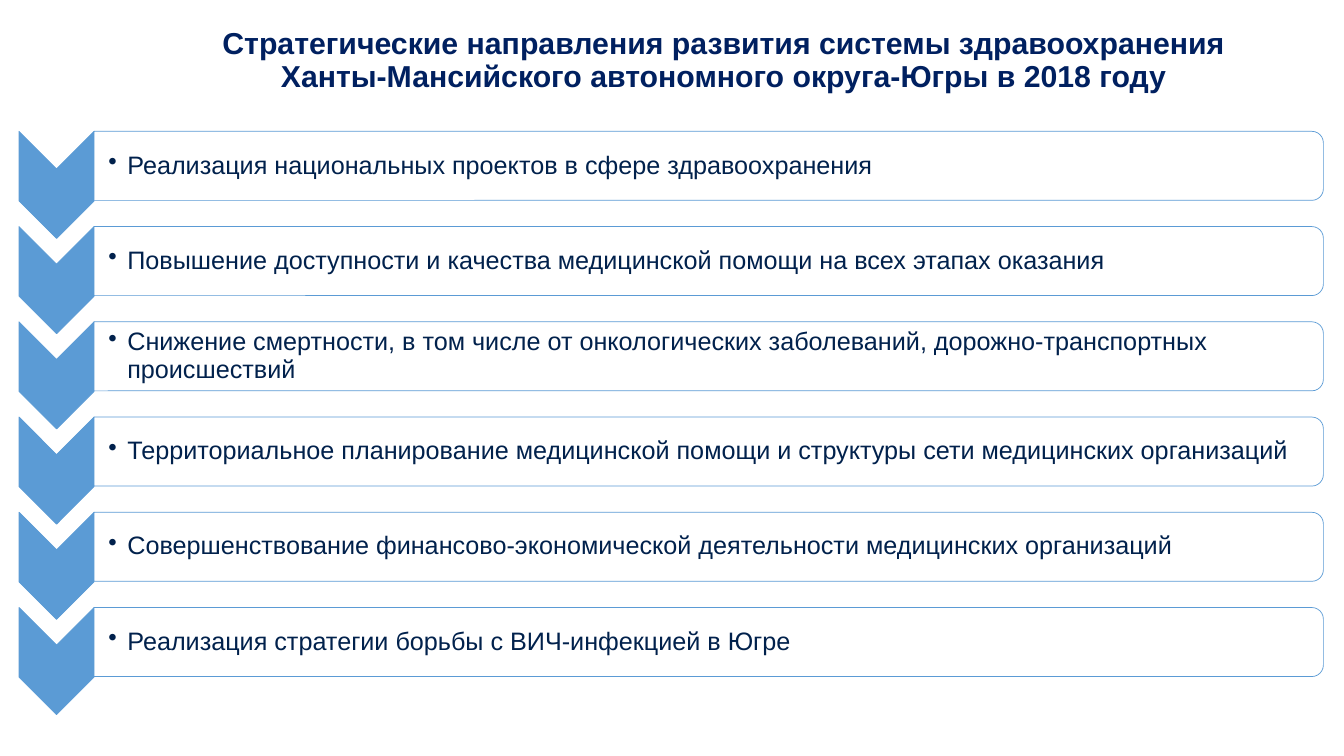
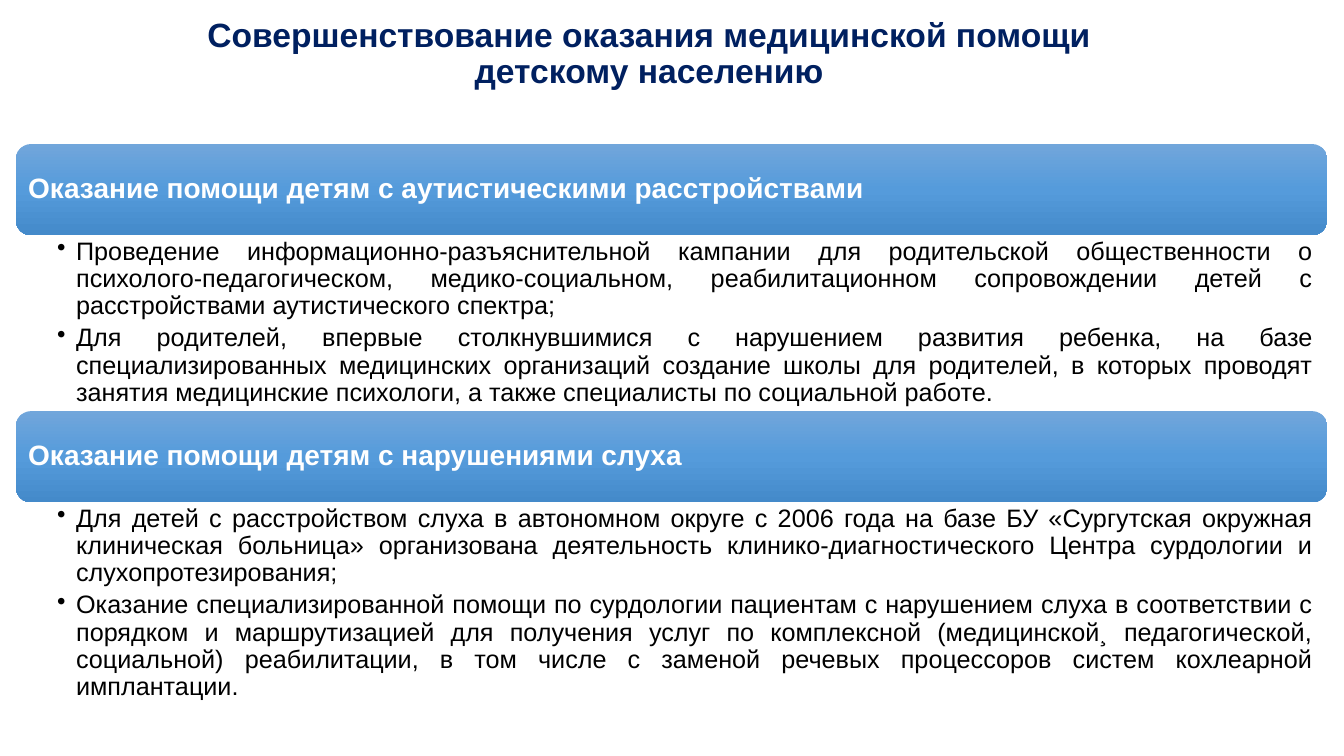
import dataclasses

import lxml.etree
import pptx
import pptx.dml.color
import pptx.enum.shapes
import pptx.enum.text
import pptx.oxml.ns
import pptx.util

Cm = pptx.util.Cm
Pt = pptx.util.Pt
RGBColor = pptx.dml.color.RGBColor
MSO_SHAPE = pptx.enum.shapes.MSO_SHAPE
MSO_ANCHOR = pptx.enum.text.MSO_ANCHOR
PP_ALIGN = pptx.enum.text.PP_ALIGN
qn = pptx.oxml.ns.qn


@dataclasses.dataclass(frozen=True)
class Theme:
    font: str = "Arial"
    title_color: RGBColor = RGBColor.from_string("002060")
    accent: RGBColor = RGBColor.from_string("5B9BD5")
    direction_color: RGBColor = RGBColor.from_string("01214C")
    white: RGBColor = RGBColor.from_string("FFFFFF")
    black: RGBColor = RGBColor.from_string("000000")
    band_stops: tuple = ((0, "71A6DB"), (50000, "559BDB"), (100000, "448ACA"))
    heading_size: float = 20
    body_size: float = 18
    line_spacing: float = 0.9
    paragraph_gap: float = 3.5


theme = Theme()


def write_text(shape, texts, size, color, bold=False, bulleted=False,
               align=PP_ALIGN.LEFT, anchor=MSO_ANCHOR.MIDDLE, margins=None):
    """Fill a shape with paragraphs; margins are left, top, right, bottom in cm."""
    frame = shape.text_frame
    frame.text = "\n".join(texts)
    frame.word_wrap = True
    frame.auto_size = pptx.enum.text.MSO_AUTO_SIZE.NONE
    frame.vertical_anchor = anchor
    if margins:
        (frame.margin_left, frame.margin_top,
         frame.margin_right, frame.margin_bottom) = map(Cm, margins)
    for number, paragraph in enumerate(frame.paragraphs):
        paragraph.alignment = align
        paragraph.line_spacing = theme.line_spacing
        if number:
            paragraph.space_before = Pt(theme.paragraph_gap)
        if bulleted:
            properties = paragraph._p.get_or_add_pPr()
            properties.set("marL", str(Cm(0.48)))
            properties.set("indent", str(-Cm(0.48)))
            lxml.etree.SubElement(properties, qn("a:buChar"), char="•")
        for run in paragraph.runs:
            run.font.name = theme.font
            run.font.size = Pt(size)
            run.font.bold = bold
            run.font.color.rgb = color


def add_turned_shape(slide, kind, left, top, width, height, fill_color):
    """Add a shape turned by 90 degrees that covers the given area in cm."""
    shape = slide.shapes.add_shape(
        kind, Cm(left + (width - height) / 2), Cm(top + (height - width) / 2),
        Cm(height), Cm(width))
    shape.rotation = 90
    shape.shadow.inherit = False
    shape.fill.solid()
    shape.fill.fore_color.rgb = fill_color
    shape.line.color.rgb = theme.accent
    shape.line.width = Pt(0.5)
    return shape


presentation = pptx.Presentation()
presentation.slide_width = Cm(33.87)
presentation.slide_height = Cm(19.05)
title_only_layout = presentation.slide_layouts[5]

# Titles: text, size, left, top, width, height
titles = [
    ("Стратегические направления развития системы здравоохранения "
     "Ханты-Мансийского автономного округа-Югры в 2018 году",
     21.6, 4.09, 0.5, 28.3, 2.1),
    ("Совершенствование оказания медицинской помощи детскому населению",
     24, 3.68, -0.13, 25.35, 3),
]
slides = []
for text, size, left, top, width, height in titles:
    slide = presentation.slides.add_slide(title_only_layout)
    title = slide.shapes.title
    title.left, title.top, title.width, title.height = map(Cm, (left, top, width, height))
    write_text(title, [text], size, theme.title_color, bold=True, align=PP_ALIGN.CENTER)
    slides.append(slide)
directions_slide, children_slide = slides

# Strategic directions
directions = [
    "Реализация национальных проектов в сфере здравоохранения",
    "Повышение доступности и качества медицинской помощи на всех этапах оказания",
    "Снижение смертности, в том числе от онкологических заболеваний, "
    "дорожно-транспортных происшествий",
    "Территориальное планирование медицинской помощи и структуры сети "
    "медицинских организаций",
    "Совершенствование финансово-экономической деятельности медицинских организаций",
    "Реализация стратегии борьбы с ВИЧ-инфекцией в Югре",
]
first_row_top, row_step = 3.31, 2.4
chevron_left, chevron_width, chevron_height = 0.48, 1.89, 2.7
frame_left, frame_width, frame_height = 2.37, 30.98, 1.74
for row, direction in enumerate(directions):
    top = first_row_top + row * row_step
    add_turned_shape(directions_slide, MSO_SHAPE.CHEVRON, chevron_left, top,
                     chevron_width, chevron_height, theme.accent)
    frame_shape = add_turned_shape(
        directions_slide, MSO_SHAPE.ROUND_2_SAME_RECTANGLE, frame_left, top,
        frame_width, frame_height, theme.white)
    fill_element = frame_shape._element.spPr.find(qn("a:solidFill"))
    lxml.etree.SubElement(fill_element[0], qn("a:alpha"), val="90000")
    direction_box = directions_slide.shapes.add_textbox(
        Cm(frame_left), Cm(top + 0.08), Cm(frame_width - 0.08), Cm(frame_height - 0.16))
    write_text(direction_box, [direction], theme.body_size, theme.direction_color,
               bulleted=True, margins=(0.36, 0.03, 0.03, 0.03))

# Care for children: band top, heading, height of the list, list items
sections = [
    (3.63, "Оказание помощи детям с аутистическими расстройствами", 4.42, [
        "Проведение информационно-разъяснительной кампании для родительской "
        "общественности о психолого-педагогическом, медико-социальном, "
        "реабилитационном сопровождении детей с расстройствами аутистического спектра;",
        "Для родителей, впервые столкнувшимися с нарушением развития ребенка, на базе "
        "специализированных медицинских организаций создание школы для родителей, "
        "в которых проводят занятия медицинские психологи, а также специалисты "
        "по социальной работе.",
    ]),
    (10.36, "Оказание помощи детям с нарушениями слуха", 4.93, [
        "Для детей с расстройством слуха в автономном округе с 2006 года на базе "
        "БУ «Сургутская окружная клиническая больница» организована деятельность "
        "клинико-диагностического Центра сурдологии и слухопротезирования;",
        "Оказание специализированной помощи по сурдологии пациентам с нарушением слуха "
        "в соответствии с порядком и маршрутизацией для получения услуг по комплексной "
        "(медицинской¸ педагогической, социальной) реабилитации, в том числе с заменой "
        "речевых процессоров систем кохлеарной имплантации.",
    ]),
]
section_left, section_width, band_height = 0.4, 33.05, 2.3
for band_top, heading, list_height, items in sections:
    band = children_slide.shapes.add_shape(
        MSO_SHAPE.ROUNDED_RECTANGLE, Cm(section_left), Cm(band_top),
        Cm(section_width), Cm(band_height))
    band.shadow.inherit = False
    band.line.fill.background()
    band.fill.gradient()
    band.fill.gradient_angle = 270
    stop_list = band._element.spPr.find(".//" + qn("a:gsLst"))
    for stop in list(stop_list):
        stop_list.remove(stop)
    for position, color in theme.band_stops:
        stop = lxml.etree.SubElement(stop_list, qn("a:gs"), pos=str(position))
        lxml.etree.SubElement(stop, qn("a:srgbClr"), val=color)
    write_text(band, [heading], theme.heading_size, theme.white, bold=True,
               margins=(0.2, 0.2, 0.2, 0.2))

    list_box = children_slide.shapes.add_textbox(
        Cm(section_left), Cm(band_top + band_height), Cm(section_width), Cm(list_height))
    write_text(list_box, items, theme.body_size, theme.black, bulleted=True,
               align=PP_ALIGN.JUSTIFY, anchor=MSO_ANCHOR.TOP,
               margins=(1.04, 0.08, 0.36, 0.08))

presentation.save("out.pptx")
